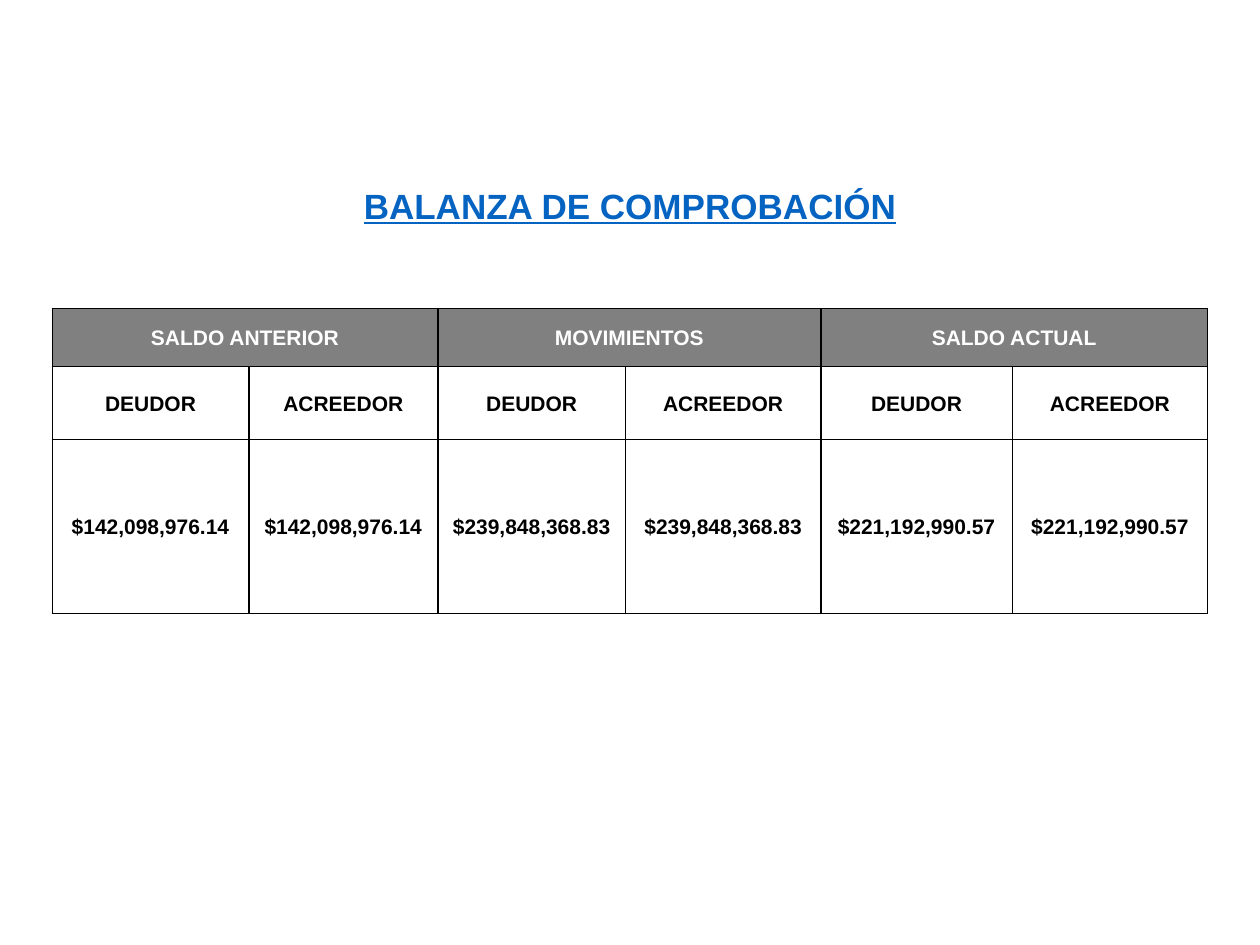
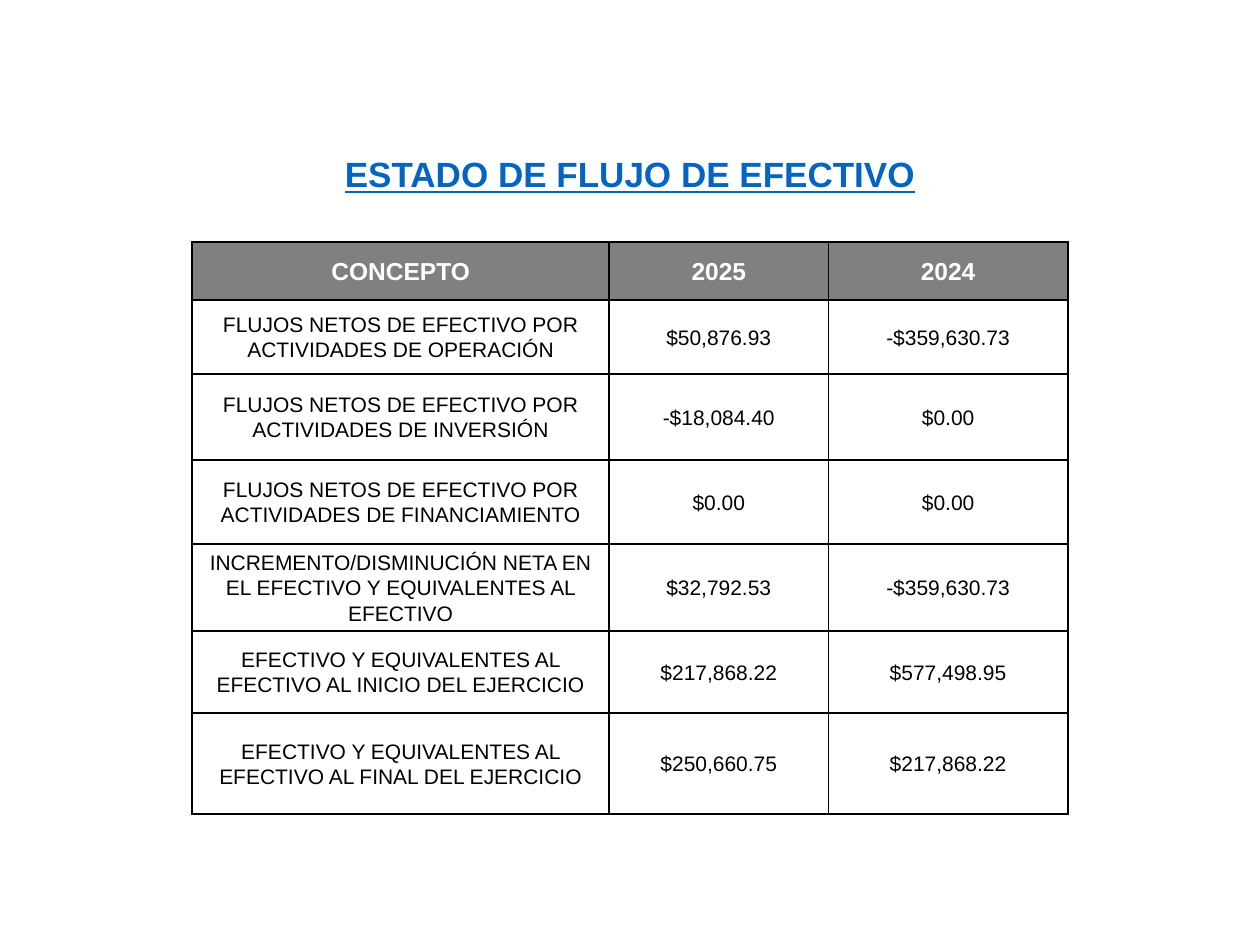
from lxml.etree import SubElement
from pptx import Presentation
from pptx.dml.color import RGBColor
from pptx.enum.text import MSO_ANCHOR, PP_ALIGN
from pptx.oxml.ns import qn
from pptx.util import Inches, Pt

# Content: a None cell is covered by the merged cell to its left
SLIDES = [
    {
        "title": "BALANZA DE COMPROBACIÓN",
        "title_box": (1.12, 5.19, 0.72),  # top, width, height
        "table_top": 2.45,
        "cols": [1.56, 1.5, 1.49, 1.55, 1.52, 1.55],
        "heights": [0.46, 0.58, 1.38],
        "header_size": 12,
        "body_bold": True,
        "rows": [
            ["SALDO ANTERIOR", None, "MOVIMIENTOS", None, "SALDO ACTUAL", None],
            ["DEUDOR", "ACREEDOR"] * 3,
            ["$142,098,976.14", "$142,098,976.14", "$239,848,368.83",
             "$239,848,368.83", "$221,192,990.57", "$221,192,990.57"],
        ],
    },
    {
        "title": "ESTADO DE FLUJO DE EFECTIVO",
        "title_box": (0.92, 5.08, 0.67),
        "table_top": 1.92,
        "cols": [3.31, 1.74, 1.9],
        "heights": [0.46, 0.59, 0.68, 0.67, 0.69, 0.65, 0.8],
        "header_size": 14,
        "body_bold": False,
        "rows": [
            ["CONCEPTO", "2025", "2024"],
            ["FLUJOS NETOS DE EFECTIVO POR ACTIVIDADES DE OPERACIÓN",
             "$50,876.93", "-$359,630.73"],
            ["FLUJOS NETOS DE EFECTIVO POR ACTIVIDADES DE INVERSIÓN",
             "-$18,084.40", "$0.00"],
            ["FLUJOS NETOS DE EFECTIVO POR ACTIVIDADES DE FINANCIAMIENTO",
             "$0.00", "$0.00"],
            ["INCREMENTO/DISMINUCIÓN NETA EN EL EFECTIVO Y EQUIVALENTES AL EFECTIVO",
             "$32,792.53", "-$359,630.73"],
            ["EFECTIVO Y EQUIVALENTES AL EFECTIVO AL INICIO DEL EJERCICIO",
             "$217,868.22", "$577,498.95"],
            ["EFECTIVO Y EQUIVALENTES AL EFECTIVO AL FINAL DEL EJERCICIO",
             "$250,660.75", "$217,868.22"],
        ],
    },
]

# Shared look
WIDTH, HEIGHT = 10, 7.5
BLUE = RGBColor(0x05, 0x63, 0xC1)
GREY = RGBColor(0x80, 0x80, 0x80)
WHITE = RGBColor(0xFF, 0xFF, 0xFF)
BLACK = RGBColor(0x00, 0x00, 0x00)
TITLE_FONT = {"size": Pt(20), "bold": True, "underline": True}
TITLE_PARA = {"alignment": PP_ALIGN.CENTER, "line_spacing": 0.9}
CELL_PARA = {"alignment": PP_ALIGN.CENTER, "line_spacing": 1.07, "space_after": Pt(8)}
TITLE_FRAME = {"word_wrap": True, "vertical_anchor": MSO_ANCHOR.BOTTOM,
               "margin_left": Inches(0.07), "margin_right": Inches(0.07),
               "margin_top": Inches(0.04), "margin_bottom": Inches(0.04)}
CELL_FRAME = {"vertical_anchor": MSO_ANCHOR.MIDDLE,
              "margin_left": Inches(0.06), "margin_right": Inches(0.06),
              "margin_top": 0, "margin_bottom": 0}


def apply(obj, values):
    for name, value in values.items():
        setattr(obj, name, value)


def write(tf, text, para, font, color):
    p = tf.paragraphs[0]
    apply(p, para)
    r = p.add_run()
    r.text = text
    apply(r.font, {"name": "Arial", **font})
    r.font.color.rgb = color


def centred(width):
    return Inches((WIDTH - width) / 2)


def add_borders(cell):
    tc_pr = cell._tc.get_or_add_tcPr()
    for side in ("lnL", "lnR", "lnT", "lnB"):
        ln = SubElement(tc_pr, qn(f"a:{side}"), w=str(Pt(1)))
        fill = SubElement(ln, qn("a:solidFill"))
        SubElement(fill, qn("a:srgbClr"), val=str(BLACK))


def add_title(s, text, top, width, height):
    tf = s.shapes.add_textbox(centred(width), Inches(top),
                              Inches(width), Inches(height)).text_frame
    apply(tf, TITLE_FRAME)
    write(tf, text, TITLE_PARA, TITLE_FONT, BLUE)


def add_statement(s, data):
    rows, cols, heights = data["rows"], data["cols"], data["heights"]
    width = sum(cols)
    table = s.shapes.add_table(len(rows), len(cols), centred(width),
                               Inches(data["table_top"]), Inches(width),
                               Inches(sum(heights))).table
    apply(table, {"first_row": False, "horz_banding": False})
    for column, w in zip(table.columns, cols):
        column.width = Inches(w)
    for row, h in zip(table.rows, heights):
        row.height = Inches(h)

    for i, row in enumerate(rows):
        header = i == 0
        font = {"size": Pt(data["header_size"] if header else 12),
                "bold": header or data["body_bold"]}
        for j, text in enumerate(row):
            cell = table.cell(i, j)
            apply(cell, CELL_FRAME)
            add_borders(cell)
            if header:
                cell.fill.solid()
                cell.fill.fore_color.rgb = GREY
            else:
                cell.fill.background()
            if text is None:
                table.cell(i, j - 1).merge(cell)
            else:
                write(cell.text_frame, text, CELL_PARA, font,
                      WHITE if header else BLACK)


def main():
    prs = Presentation()
    apply(prs, {"slide_width": Inches(WIDTH), "slide_height": Inches(HEIGHT)})
    for data in SLIDES:
        s = prs.slides.add_slide(prs.slide_layouts[6])
        add_title(s, data["title"], *data["title_box"])
        add_statement(s, data)
    prs.save("out.pptx")


if __name__ == "__main__":
    main()
